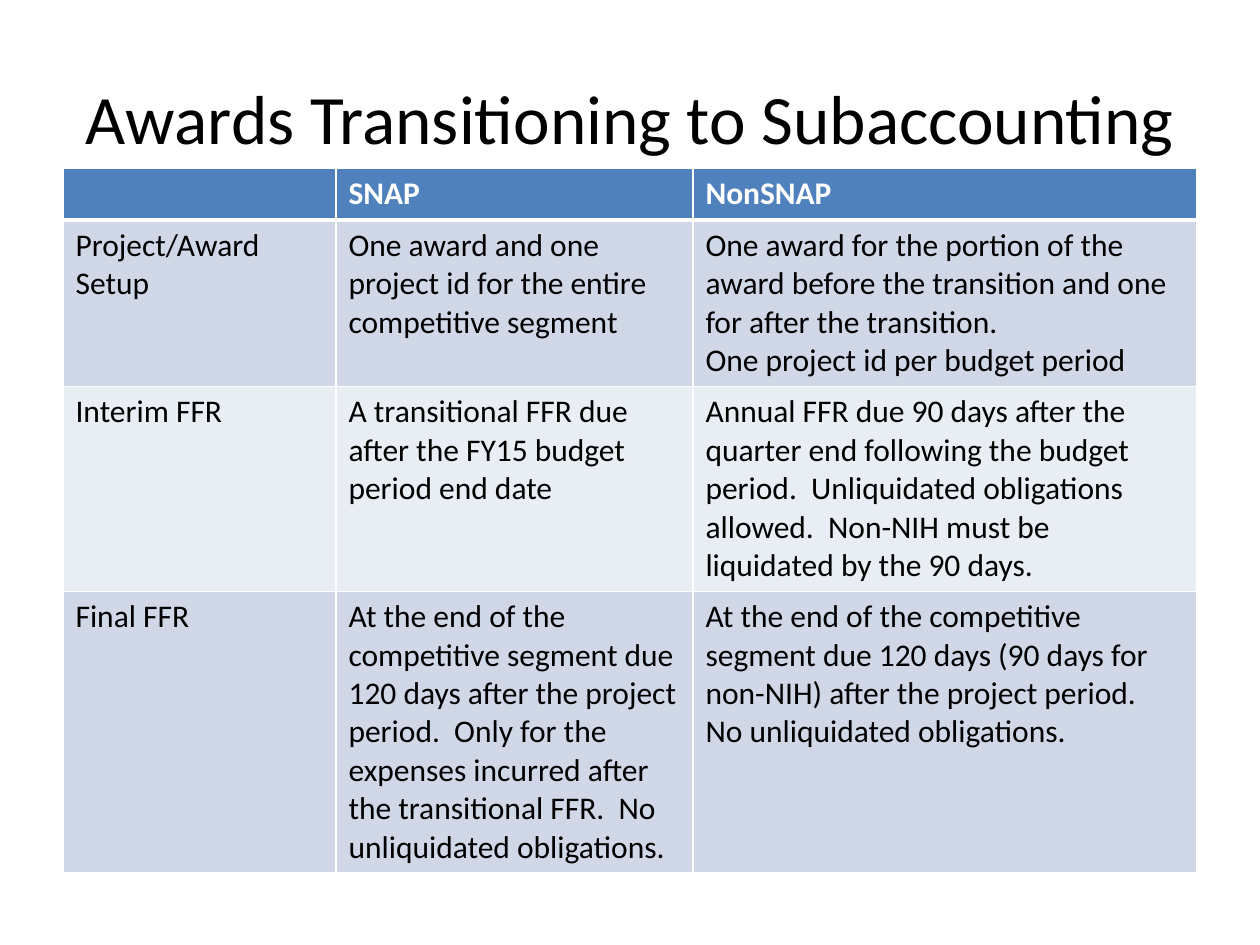
from dataclasses import dataclass

import lxml.etree
import pptx
import pptx.dml.color
import pptx.enum.text
import pptx.oxml.ns
import pptx.util

EMU_PER_PX = 914400 // 126
COLORS = {
    "header": "4F81BD",
    "band_dark": "D0D8E8",
    "band_light": "E9EDF4",
    "white": "FFFFFF",
    "black": "000000",
}
FONT = "Calibri"
COLUMN_WIDTHS = (273, 357, 504)


@dataclass(frozen=True)
class TableRow:
    height: int
    fill: str
    texts: tuple[str, ...]
    color: str = "black"
    bold: bool = False
    top_border: int = 1
    bottom_border: int = 1


ROWS = (
    TableRow(52, "header", ("", "SNAP", "NonSNAP"), "white", True, bottom_border=3),
    TableRow(164, "band_dark", (
        "Project/Award Setup",
        "One award and one project id for the entire competitive segment",
        "One award for the portion of the award before the transition and one for after "
        "the transition.\nOne project id per budget period",
    ), top_border=3),
    TableRow(202, "band_light", (
        "Interim FFR",
        "A transitional FFR due after the FY15 budget period end date",
        "Annual FFR due 90 days after the quarter end following the budget period.  "
        "Unliquidated obligations allowed.  Non-NIH must be liquidated by the 90 days.",
    )),
    TableRow(276, "band_dark", (
        "Final FFR",
        "At the end of the competitive segment due 120 days after the project period.  "
        "Only for the expenses incurred after the transitional FFR.  "
        "No unliquidated obligations.",
        "At the end of the competitive segment due 120 days (90 days for non-NIH) after "
        "the project period.  No unliquidated obligations.",
    )),
)


def px(length: int) -> pptx.util.Emu:
    return pptx.util.Emu(length * EMU_PER_PX)


def rgb(name: str) -> pptx.dml.color.RGBColor:
    return pptx.dml.color.RGBColor.from_string(COLORS[name])


def write_text(frame, text: str, size: float, color: str, bold: bool = False) -> None:
    for index, line in enumerate(text.split("\n")):
        para = frame.paragraphs[0] if index == 0 else frame.add_paragraph()
        para.font.size = pptx.util.Pt(size)
        if line:
            span = para.add_run()
            span.text = line
            span.font.name = FONT
            span.font.size = pptx.util.Pt(size)
            span.font.bold = bold
            span.font.color.rgb = rgb(color)


def add_borders(cell, top: int, bottom: int) -> None:
    properties = cell._tc.get_or_add_tcPr()
    qn = pptx.oxml.ns.qn
    widths = {"a:lnL": 1, "a:lnR": 1, "a:lnT": top, "a:lnB": bottom}
    for index, (tag, width) in enumerate(widths.items()):
        line = lxml.etree.Element(qn(tag), w=str(pptx.util.Pt(width)))
        fill = lxml.etree.SubElement(line, qn("a:solidFill"))
        lxml.etree.SubElement(fill, qn("a:srgbClr"), val=COLORS["white"])
        properties.insert(index, line)


def add_title(page, text: str) -> None:
    title = page.shapes.title
    title.left, title.top, title.width, title.height = px(63), px(38), px(1134), px(157)
    title.text_frame.vertical_anchor = pptx.enum.text.MSO_ANCHOR.MIDDLE
    write_text(title.text_frame, text, 39.6, "black")
    title.text_frame.paragraphs[0].alignment = pptx.enum.text.PP_ALIGN.CENTER


def add_awards_table(page) -> None:
    table = page.shapes.add_table(
        len(ROWS), len(COLUMN_WIDTHS), px(63), px(168),
        px(sum(COLUMN_WIDTHS)), px(sum(row.height for row in ROWS)),
    ).table
    for column, width in zip(table.columns, COLUMN_WIDTHS):
        column.width = px(width)
    for table_row, row in zip(table.rows, ROWS):
        table_row.height = px(row.height)
        for cell, text in zip(table_row.cells, row.texts):
            cell.fill.solid()
            cell.fill.fore_color.rgb = rgb(row.fill)
            add_borders(cell, row.top_border, row.bottom_border)
            write_text(cell.text_frame, text, 18, row.color, row.bold)


def main() -> None:
    deck = pptx.Presentation()
    deck.slide_width, deck.slide_height = px(1260), px(945)
    page = deck.slides.add_slide(deck.slide_layouts[5])
    add_title(page, "Awards Transitioning to Subaccounting")
    add_awards_table(page)
    deck.save("out.pptx")


if __name__ == "__main__":
    main()
